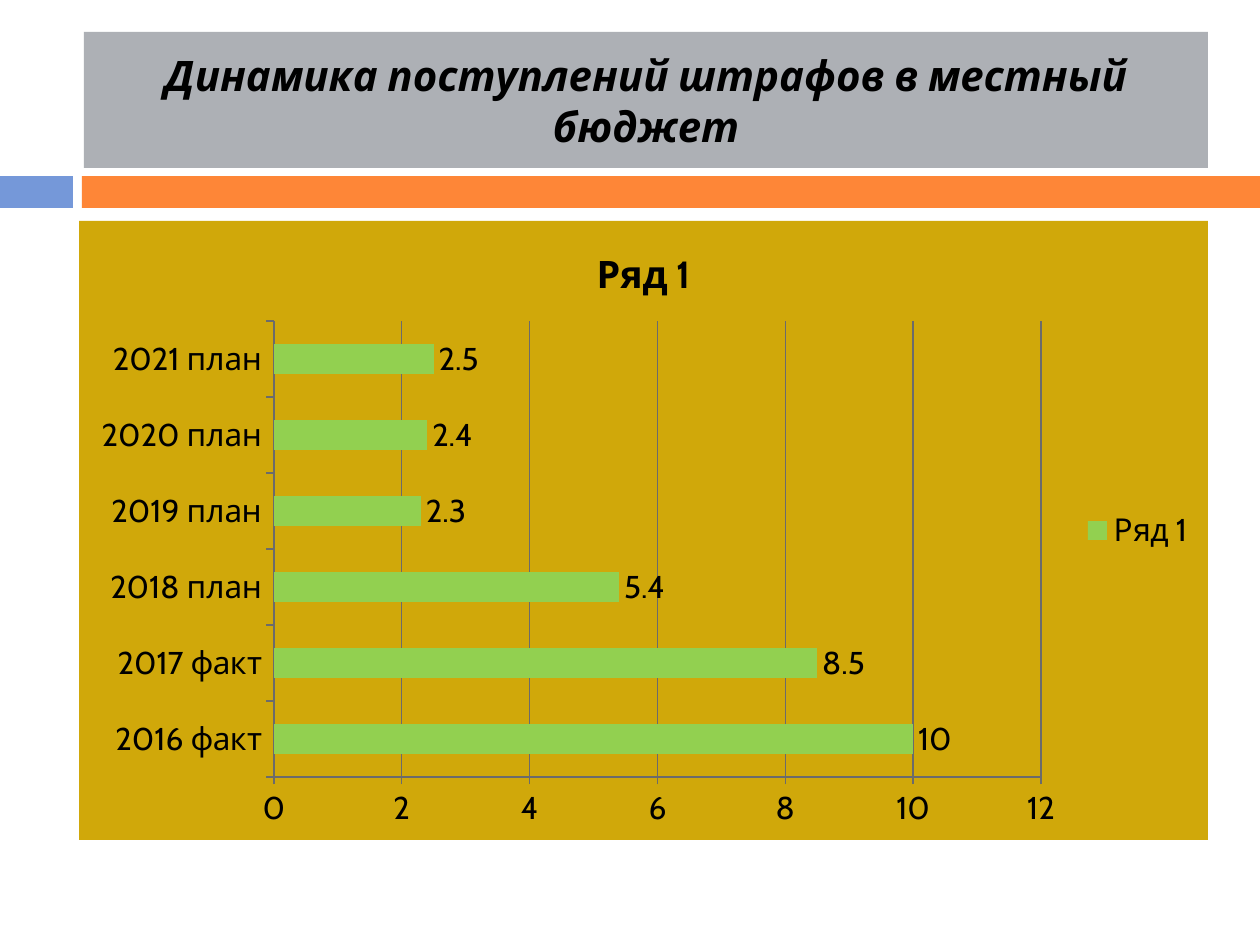
from dataclasses import dataclass

from lxml import etree
from pptx import Presentation
from pptx import util as u
from pptx.chart.data import CategoryChartData
from pptx.dml.color import RGBColor
from pptx.enum import chart as ch, shapes, text

PX = u.Inches(1) // 126


@dataclass
class Theme:
    font: str = "Cabin"
    ink: str = "000000"
    blue: str = "7598D9"
    orange: str = "FE8637"
    title_fill: str = "ADB0B5"
    chart_fill: str = "D0A80A"
    bar: str = "92D050"
    grid: str = "6B6B6B"
    title_pt: int = 24
    chart_title_pt: float = 21.6
    chart_pt: int = 18


T = Theme()


def px(*lengths):
    return [n * PX for n in lengths]


def style(font, size, bold=False, italic=False):
    font.name, font.size = T.font, u.Pt(size)
    font.bold, font.italic = bold, italic
    font.color.rgb = RGBColor.from_string(T.ink)


prs = Presentation()
prs.slide_width, prs.slide_height = px(1260, 945)
s = prs.slides.add_slide(prs.slide_layouts[5])

# Divider bands
for left, width, color in ((0, 73, T.blue), (82, 1178, T.orange)):
    sp = s.shapes.add_shape(shapes.MSO_SHAPE.RECTANGLE, *px(left, 176, width, 32))
    sp.shadow.inherit = False
    sp.fill.solid()
    sp.fill.fore_color.rgb = RGBColor.from_string(color)
    sp.line.fill.background()

# Title
title = s.shapes.title
title.left, title.top, title.width, title.height = px(84, 32, 1124, 136)
title.fill.solid()
title.fill.fore_color.rgb = RGBColor.from_string(T.title_fill)
tf = title.text_frame
tf.word_wrap = True
tf.vertical_anchor = text.MSO_ANCHOR.MIDDLE
p = tf.paragraphs[0]
p.alignment = text.PP_ALIGN.CENTER
r = p.add_run()
r.text = "Динамика поступлений штрафов в местный бюджет"
style(r.font, T.title_pt, bold=True, italic=True)

# Chart of fines by year
data = CategoryChartData()
data.categories = ["2016 факт", "2017 факт", "2018 план",
                   "2019 план", "2020 план", "2021 план"]
data.add_series("Ряд 1", (10, 8.5, 5.4, 2.3, 2.4, 2.5))
chart = s.shapes.add_chart(ch.XL_CHART_TYPE.BAR_CLUSTERED,
                           *px(79, 221, 1129, 619), data).chart
style(chart.font, T.chart_pt)

chart.has_title = True
r = chart.chart_title.text_frame.paragraphs[0].add_run()
r.text = "Ряд 1"
style(r.font, T.chart_title_pt, bold=True)
chart.chart_title.include_in_layout = False

chart.has_legend = True
chart.legend.position = ch.XL_LEGEND_POSITION.RIGHT
chart.legend.include_in_layout = False

value_axis = chart.value_axis
value_axis.minimum_scale, value_axis.maximum_scale = 0, 12
value_axis.major_unit = 2
value_axis.has_major_gridlines = True
for axis in (chart.category_axis, value_axis):
    axis.major_tick_mark = ch.XL_TICK_MARK.OUTSIDE
for line in (chart.category_axis.format.line, value_axis.format.line,
             value_axis.major_gridlines.format.line):
    line.color.rgb = RGBColor.from_string(T.grid)
    line.width = u.Pt(0.75)

plot = chart.plots[0]
plot.vary_by_categories = False
plot.gap_width = 150
series = plot.series[0]
series.format.fill.solid()
series.format.fill.fore_color.rgb = RGBColor.from_string(T.bar)
labels = series.data_labels
labels.show_value = True
labels.position = ch.XL_LABEL_POSITION.OUTSIDE_END

# Chart area background: spPr goes right after the chart element
area = etree.fromstring(
    '<c:spPr xmlns:c="http://schemas.openxmlformats.org/drawingml/2006/chart"'
    ' xmlns:a="http://schemas.openxmlformats.org/drawingml/2006/main">'
    f'<a:solidFill><a:srgbClr val="{T.chart_fill}"/></a:solidFill>'
    '<a:ln><a:noFill/></a:ln></c:spPr>')
chart.element.chart.addnext(area)

prs.save("out.pptx")
